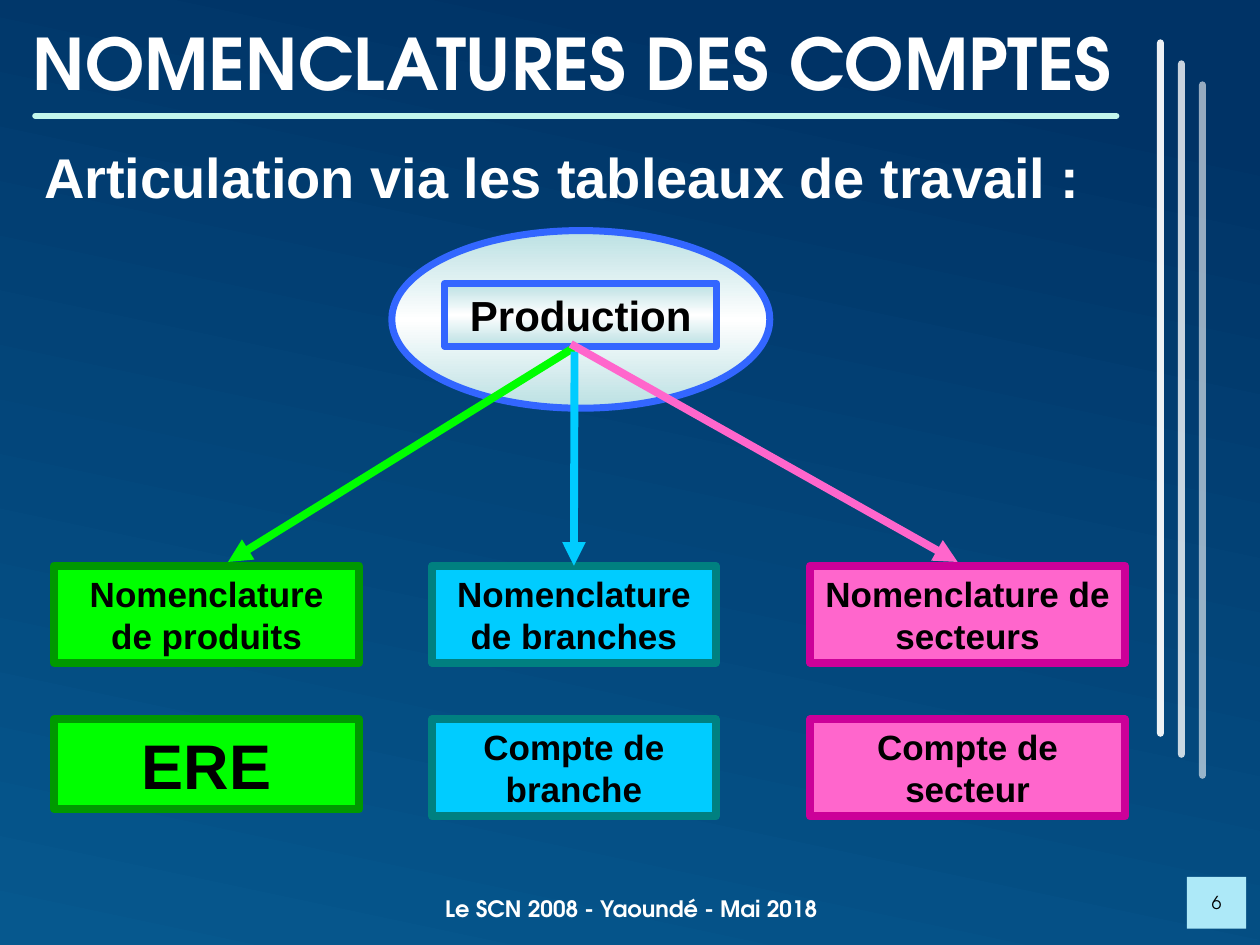
from copy import deepcopy
from dataclasses import dataclass

from lxml import etree
from pptx import Presentation
from pptx.dml.color import RGBColor
from pptx.enum.shapes import MSO_CONNECTOR, MSO_SHAPE
from pptx.enum.text import MSO_ANCHOR, MSO_AUTO_SIZE, PP_ALIGN
from pptx.oxml.ns import qn
from pptx.util import Inches, Pt

LEFT, CENTER = PP_ALIGN.LEFT, PP_ALIGN.CENTER
MIDDLE = MSO_ANCHOR.MIDDLE
NO_FIT = MSO_AUTO_SIZE.NONE
RECT, OVAL = MSO_SHAPE.RECTANGLE, MSO_SHAPE.OVAL
STRAIGHT = MSO_CONNECTOR.STRAIGHT
TOP = 0


@dataclass(frozen=True)
class Theme:
    head: str = "TeX Gyre Adventor"
    body: str = "Arial"
    white: str = "FFFFFF"
    black: str = "000000"
    rule: str = "C3F7ED"
    badge: str = "ADE9F8"
    edge: str = "3366FF"
    back: tuple = ((0.1, "003366"), (1, "06588E"))
    sheen: tuple = ((0, "BBE0E3"), (0.5, "FFFFFF"), (1, "BBE0E3"))
    title: float = 40.6
    lead: float = 32
    hub: float = 24
    label: float = 20
    big: float = 36
    foot: float = 12.9
    page: float = 10.2


T = Theme()
COL_X, COL_STEP = 0.43, 3
ROW_Y, ROW_STEP, ROW_H = 4.49, 1.22, 0.77
# width, fill, edge, labels, arrow start, arrow end
COLS = [
    (2.42, "00FF00", "009900", ["Nomenclature de produits", "ERE"],
     (4.57, 2.75), (1.81, 4.46)),
    (2.25, "00CCFF", "008080", ["Nomenclature de branches", "Compte de branche"],
     (4.56, 2.79), (4.56, 4.49)),
    (2.5, "FF66CC", "CC0099", ["Nomenclature de secteurs", "Compte de secteur"],
     (4.53, 2.73), (7.6, 4.46)),
]


def rgb(tone):
    return RGBColor.from_string(tone)


def box_of(*sides):
    return [Inches(side) for side in sides]


def blend(fill, root, stops, angle):
    """Give fill a gradient; root is the element that holds it."""
    fill.gradient()
    fill.gradient_angle = angle
    group = root.find(".//" + qn("a:gsLst"))
    while len(group) < len(stops):
        group.append(deepcopy(group[-1]))
    for stop, (place, tone) in zip(fill.gradient_stops, stops):
        stop.position = place
        stop.color.rgb = rgb(tone)


def write(shape, text, size, tone=T.black, face=T.body, bold=True,
          align=CENTER, inset=0.1):
    frame = shape.text_frame
    form = {"word_wrap": True, "auto_size": NO_FIT, "vertical_anchor": MIDDLE,
            "margin_left": Inches(inset), "margin_right": Inches(inset)}
    for key, value in form.items():
        setattr(frame, key, value)
    frame.text = text
    para = frame.paragraphs[0]
    para.alignment = align
    font = para.runs[0].font
    for key, value in {"name": face, "size": Pt(size), "bold": bold}.items():
        setattr(font, key, value)
    font.color.rgb = rgb(tone)


def block(slide, kind, area, fill, edge=None, width=4.5):
    """Add a shape; fill is a colour or a tuple of gradient stops."""
    shape = slide.shapes.add_shape(kind, *box_of(*area))
    shape.shadow.inherit = False
    if isinstance(fill, tuple):
        blend(shape.fill, shape.element, fill, 270)
    else:
        shape.fill.solid()
        shape.fill.fore_color.rgb = rgb(fill)
    if edge:
        shape.line.color.rgb = rgb(edge)
        shape.line.width = Pt(width)
    else:
        shape.line.fill.background()
    return shape


def stroke(slide, start, end, tone, width):
    line = slide.shapes.add_connector(STRAIGHT, *box_of(*start, *end))
    line.line.color.rgb = rgb(tone)
    line.line.width = Pt(width)
    etree.SubElement(line.element.spPr, qn("a:effectLst"))
    return line


def bar(slide, start, end, tone, width, alpha=100):
    """Add a line with round ends and an opacity in percent."""
    line = stroke(slide, start, end, tone, width)
    ln = line.element.spPr.find(qn("a:ln"))
    ln.set("cap", "rnd")
    color = ln.find(".//" + qn("a:srgbClr"))
    etree.SubElement(color, qn("a:alpha"), val=str(alpha * 1000))


def arrow(slide, start, end, tone):
    line = stroke(slide, start, end, tone, 4.5)
    ln = line.element.spPr.find(qn("a:ln"))
    etree.SubElement(ln, qn("a:tailEnd"), type="triangle")
    return line


def label(slide, area, text, size, **form):
    write(slide.shapes.add_textbox(*box_of(*area)), text, size, T.white, **form)


def frame(slide):
    """Add the background, title, rules, footer and page number."""
    blend(slide.background.fill, slide.element, T.back, 258)
    for i, alpha in enumerate((93, 79, 58)):
        x, y = 9.21 + i / 6, 0.34 + i / 6
        bar(slide, (x, y), (x, y + 5.48), T.white, 4, alpha)
    label(slide, (2.03, 7.05, 5.96, 0.32), "Le SCN 2008 - Yaoundé - Mai 2018",
          T.foot, face=T.head)
    bar(slide, (0.28, 0.92), (8.86, 0.92), T.rule, 3.5)
    title = slide.shapes.title
    sides = ("left", "top", "width", "height")
    for key, value in zip(sides, box_of(0.16, 0, 9.02, 0.99)):
        setattr(title, key, value)
    write(title, "NOMENCLATURES DES COMPTES", T.title, T.white, T.head, align=LEFT)
    badge = block(slide, RECT, (9.42, 6.96, 0.47, 0.41), T.badge)
    write(badge, "6", T.page, face=T.head, bold=False)


def hub(slide):
    block(slide, OVAL, (3.11, 1.83, 3, 1.41), T.sheen, T.edge, 4)
    core = block(slide, RECT, (3.53, 2.25, 2.16, 0.5), T.sheen, T.edge, 4)
    write(core, "Production", T.hub)


def branch(slide, col, width, fill, edge, texts, start, end):
    """Add one column: its boxes and the arrow that leads to it."""
    x = COL_X + col * COL_STEP
    boxes = []
    for row, text in enumerate(texts):
        short = text == "ERE"
        area = (x, ROW_Y + row * ROW_STEP, width, 0.71 if short else ROW_H)
        box = block(slide, RECT, area, fill, edge)
        write(box, text, T.big if short else T.label)
        boxes.append(box)
    line = arrow(slide, start, end, fill)
    if end[1] == ROW_Y:
        line.end_connect(boxes[0], TOP)


def main():
    deck = Presentation()
    deck.slide_width, deck.slide_height = box_of(10, 7.5)
    slide = deck.slides.add_slide(deck.slide_layouts[5])
    frame(slide)
    label(slide, (0.33, 1.08, 8.46, 0.63),
          "Articulation via les tableaux de travail :", T.lead,
          align=LEFT, inset=0.02)
    hub(slide)
    for col, parts in enumerate(COLS):
        branch(slide, col, *parts)
    deck.save("out.pptx")


if __name__ == "__main__":
    main()
